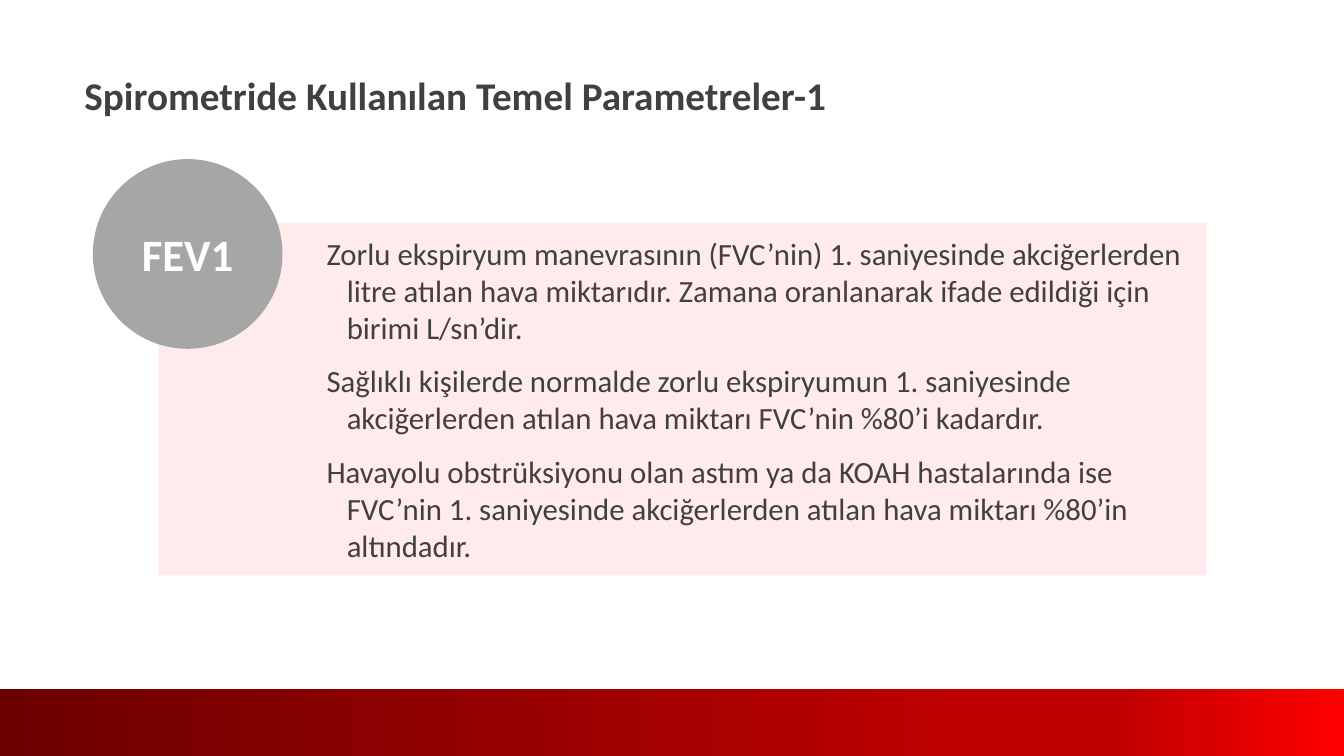
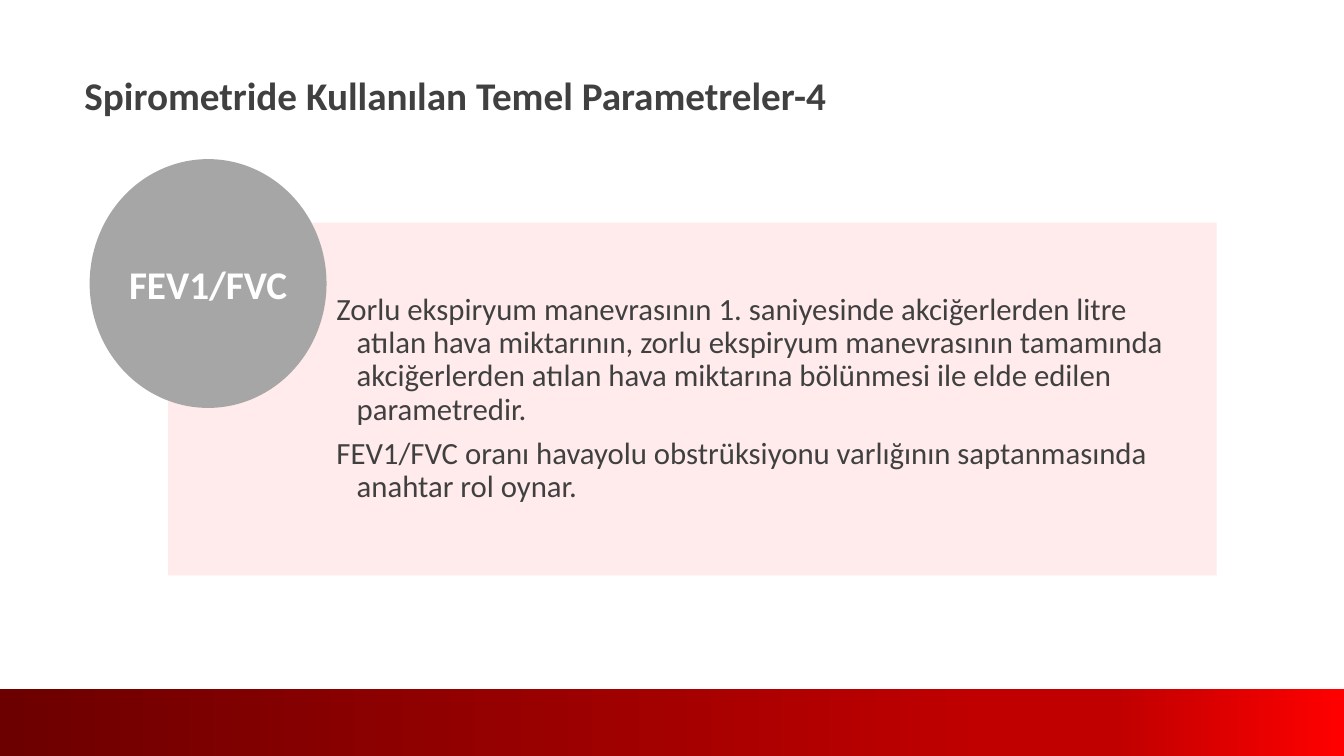
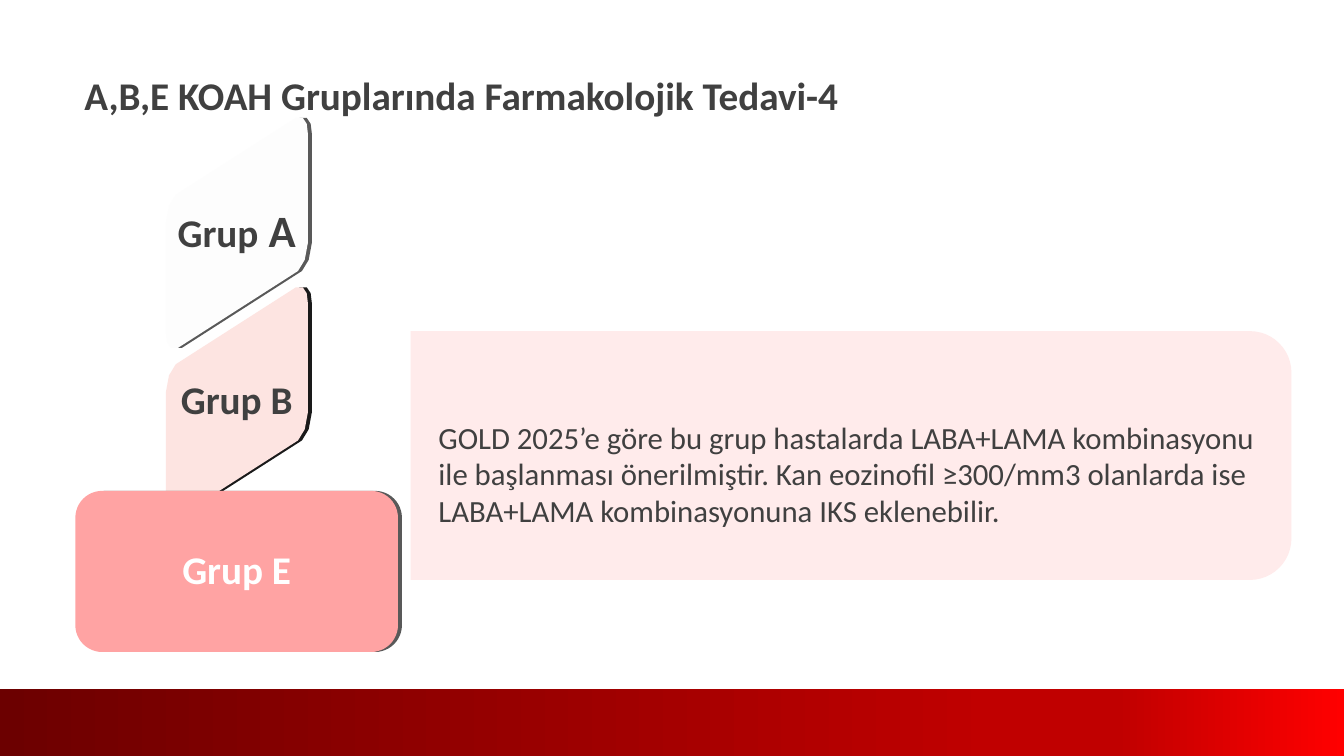
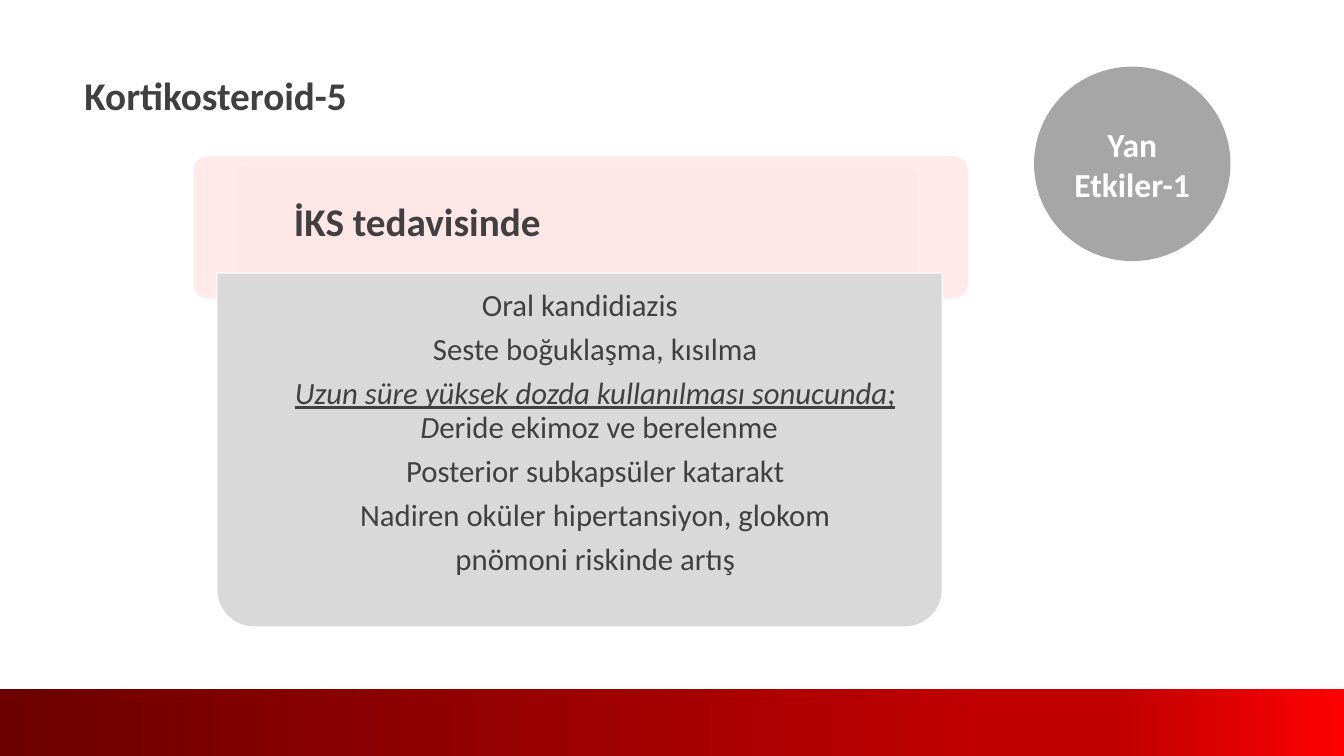
from lxml import etree
from pptx import Presentation
from pptx.dml.color import RGBColor
from pptx.enum.shapes import MSO_SHAPE
from pptx.enum.text import MSO_ANCHOR, PP_ALIGN
from pptx.oxml.ns import qn
from pptx.util import Cm, Pt

RECT = MSO_SHAPE.RECTANGLE
ROUNDED = MSO_SHAPE.ROUNDED_RECTANGLE
TOP_ROUNDED = MSO_SHAPE.ROUND_2_SAME_RECTANGLE
OVAL = MSO_SHAPE.OVAL
LEFT, CENTER = PP_ALIGN.LEFT, PP_ALIGN.CENTER
TOP, MIDDLE = MSO_ANCHOR.TOP, MSO_ANCHOR.MIDDLE

FONT = "Calibri"
INK, WHITE, GREY, PALE = "404040", "FFFFFF", "A6A6A6", "FFEBEB"
BAND_STOPS = [(0, "6C0000"), (74, "C00000"), (83, "C00000"), (100, "FF0000")]
SLIDE_WIDTH, SLIDE_HEIGHT, BAND_HEIGHT = 33.87, 19.05, 1.68
PANEL_MARGINS = (4.24, 0.43, 0.43, 0.43)
TIGHT = 7.7

TILE_HALF = [(0, 2.65), (0.08, 2.22), (0.25, 1.94), (3.28, 0),
             (3.45, 0), (3.55, 0.15), (3.58, 0.4)]
TILE_OUTLINE = TILE_HALF + [(3.58 - x, 5.8 - y) for x, y in TILE_HALF]
DEPTH = 0.1


def rgb(value):
    return RGBColor.from_string(value)


class Deck:
    """Holds the shared style and the slide being built."""

    def __init__(self):
        self.prs = Presentation()
        self.prs.slide_width = Cm(SLIDE_WIDTH)
        self.prs.slide_height = Cm(SLIDE_HEIGHT)
        self.slide = None

    def new_slide(self, title):
        self.slide = self.prs.slides.add_slide(self.prs.slide_layouts[6])
        self.text((1.88, 1.68, 25.4, 1.45), [title], size=28, bold=True)
        self.band()

    def band(self):
        band = self.shape(RECT, (0, SLIDE_HEIGHT - BAND_HEIGHT, SLIDE_WIDTH, BAND_HEIGHT), WHITE)
        band.fill.gradient()
        band.fill.gradient_angle = 0
        stops = band._element.spPr.find(qn("a:gradFill")).find(qn("a:gsLst"))
        for stop in list(stops):
            stops.remove(stop)
        for percent, color in BAND_STOPS:
            stop = etree.SubElement(stops, qn("a:gs"), pos=str(percent * 1000))
            etree.SubElement(stop, qn("a:srgbClr"), val=color)

    def paint(self, shape, fill, line=None):
        shape.shadow.inherit = False
        shape.fill.solid()
        shape.fill.fore_color.rgb = rgb(fill)
        if line:
            shape.line.color.rgb = rgb(line)
            shape.line.width = Pt(1)
        else:
            shape.line.fill.background()
        return shape

    def shape(self, kind, box, fill, line=None, adjust=(), rotation=0):
        shape = self.slide.shapes.add_shape(kind, *map(Cm, box))
        for index, value in enumerate(adjust):
            shape.adjustments[index] = value
        shape.rotation = rotation
        return self.paint(shape, fill, line)

    def text(self, box, paragraphs, margins=(0.25, 0.13, 0.25, 0.13), **style):
        holder = self.slide.shapes.add_textbox(*map(Cm, box))
        self.set_text(holder, paragraphs, margins, **style)

    def set_text(self, holder, paragraphs, margins=(0, 0, 0, 0), size=22, color=INK, bold=False,
                 align=LEFT, anchor=TOP, spacing=1.0, after=0, indent=(0, 0), first_flush=False):
        frame = holder.text_frame
        frame.word_wrap = True
        frame.vertical_anchor = anchor
        (frame.margin_left, frame.margin_top,
         frame.margin_right, frame.margin_bottom) = map(Cm, margins)
        for index, content in enumerate(paragraphs):
            paragraph = frame.add_paragraph() if index else frame.paragraphs[0]
            paragraph.alignment = align
            paragraph.line_spacing = spacing
            paragraph.space_after = Pt(after)
            if index or not first_flush:
                properties = paragraph._p.get_or_add_pPr()
                properties.set("marL", str(Cm(indent[0])))
                properties.set("indent", str(Cm(indent[1])))
            paragraph.font.name = FONT
            paragraph.font.size = Pt(size)
            paragraph.font.bold = bold
            paragraph.font.color.rgb = rgb(color)
            runs = [(content, {})] if isinstance(content, str) else content
            for words, changes in runs:
                run = paragraph.add_run()
                run.text = words
                for attribute, value in changes.items():
                    setattr(run.font, attribute, value)

    def panel(self, left, paragraphs, **style):
        panel = self.shape(RECT, (left, 5.61, 26.42, 8.89), PALE)
        self.set_text(panel, paragraphs, PANEL_MARGINS, anchor=MIDDLE, indent=(0.51, -0.51), **style)

    def circle(self, box, label, size):
        circle = self.shape(OVAL, box, GREY)
        self.set_text(circle, [label], size=size, color=WHITE, bold=True,
                      align=CENTER, anchor=MIDDLE)

    def tile(self, left, top, fill, edge):
        for shift, color in ((DEPTH, edge), (0, fill)):
            points = [((left + shift + x) * 100, (top + y) * 100) for x, y in TILE_OUTLINE]
            builder = self.slide.shapes.build_freeform(*points[0], scale=Cm(0.01))
            builder.add_line_segments(points[1:], close=True)
            self.paint(builder.convert_to_shape(), color)


def parameter_slides(deck):
    deck.new_slide("Spirometride Kullanılan Temel Parametreler-1")
    deck.panel(3.99, [
        "Zorlu ekspiryum manevrasının (FVC’nin) 1. saniyesinde akciğerlerden litre atılan hava "
        "miktarıdır. Zamana oranlanarak ifade edildiği için birimi L/sn’dir.",
        "Sağlıklı kişilerde normalde zorlu ekspiryumun 1. saniyesinde akciğerlerden atılan hava "
        "miktarı FVC’nin %80’i kadardır.",
        "Havayolu obstrüksiyonu olan astım ya da KOAH hastalarında ise FVC’nin 1. saniyesinde "
        "akciğerlerden atılan hava miktarı %80’in altındadır.",
    ], after=12)
    deck.circle((2.34, 4.01, 4.78, 4.78), "FEV1", 32)

    deck.new_slide("Spirometride Kullanılan Temel Parametreler-4")
    deck.panel(4.24, [
        "Zorlu ekspiryum manevrasının 1. saniyesinde akciğerlerden litre atılan hava miktarının, "
        "zorlu ekspiryum manevrasının tamamında akciğerlerden atılan hava miktarına bölünmesi ile "
        "elde edilen parametredir.",
        "FEV1/FVC oranı havayolu obstrüksiyonu varlığının saptanmasında anahtar rol oynar.",
    ], spacing=0.9, after=TIGHT)
    deck.circle((2.26, 4.01, 5.97, 6.27), "FEV1/FVC", 28)


def treatment_slide(deck):
    deck.new_slide("A,B,E KOAH Gruplarında Farmakolojik Tedavi-4")
    left, top, width, height, pitch = 1.9, 3.83, 8.13, 4.06, 4.27
    deck.tile(4.18, 2.97, "FDFDFD", "595959")
    deck.tile(4.18, 2.97 + pitch, "FDE4E1", "1A1A1A")
    for shift, color in ((DEPTH, "595959"), (0, "FFA3A3")):
        deck.shape(ROUNDED, (left + shift, top + 2 * pitch, width, height), color)
    group_a = [("Grup", {}), (" A", {"size": Pt(32)})]
    groups = [(group_a, INK), ("Grup B", INK), ("Grup E", WHITE)]
    for row, (label, color) in enumerate(groups):
        deck.text((left, top + row * pitch, width, height), [label], size=28, color=color,
                  bold=True, align=CENTER, anchor=MIDDLE, spacing=0.9)
    deck.shape(TOP_ROUNDED, (18.31, 0.38, 6.27, 22.2), PALE, rotation=90)
    deck.text((10.8, 10.41, 21.31, 3.07), [
        "GOLD 2025’e göre bu grup hastalarda LABA+LAMA kombinasyonu ile başlanması önerilmiştir. "
        "Kan eozinofil ≥300/mm3 olanlarda ise LABA+LAMA kombinasyonuna IKS eklenebilir."])


def side_effect_slide(deck):
    deck.new_slide("Kortikosteroid-5")
    deck.shape(ROUNDED, (4.88, 3.94, 19.51, 3.58), "FFE9E9", adjust=[0.1])
    deck.shape(ROUNDED, (5.97, 4.17, 17.17, 2.87), "FFE7E7", adjust=[0.1])
    deck.shape(TOP_ROUNDED, (5.46, 6.88, 18.29, 8.92), "D9D9D9", WHITE, [0.105, 0], 180)
    effects_box, margins = (5.74, 6.88, 17.75, 8.64), (0.43, 0.43, 0.43, 0.43)
    long_use = [
        ("Uzun süre yüksek dozda kullanılması sonucunda; ", {"italic": True, "underline": True}),
        ("D", {"italic": True}),
        ("eride ekimoz ve berelenme", {}),
    ]
    deck.text(effects_box, [
        "Oral kandidiazis",
        "Seste boğuklaşma, kısılma",
        long_use,
        "Posterior subkapsüler katarakt",
        "Nadiren oküler hipertansiyon, glokom",
        "pnömoni riskinde artış",
    ], margins, align=CENTER, spacing=0.9, after=TIGHT, indent=(0.97, -0.2), first_flush=True)
    deck.text((6.12, 3.84, 8.79, 3.58), ["İKS tedavisinde"], size=28, bold=True,
              align=CENTER, anchor=MIDDLE, spacing=0.9)
    deck.circle((26.06, 1.68, 4.95, 4.9), "Yan Etkiler-1", 24)


def main():
    deck = Deck()
    parameter_slides(deck)
    treatment_slide(deck)
    side_effect_slide(deck)
    deck.prs.save("out.pptx")


if __name__ == "__main__":
    main()
